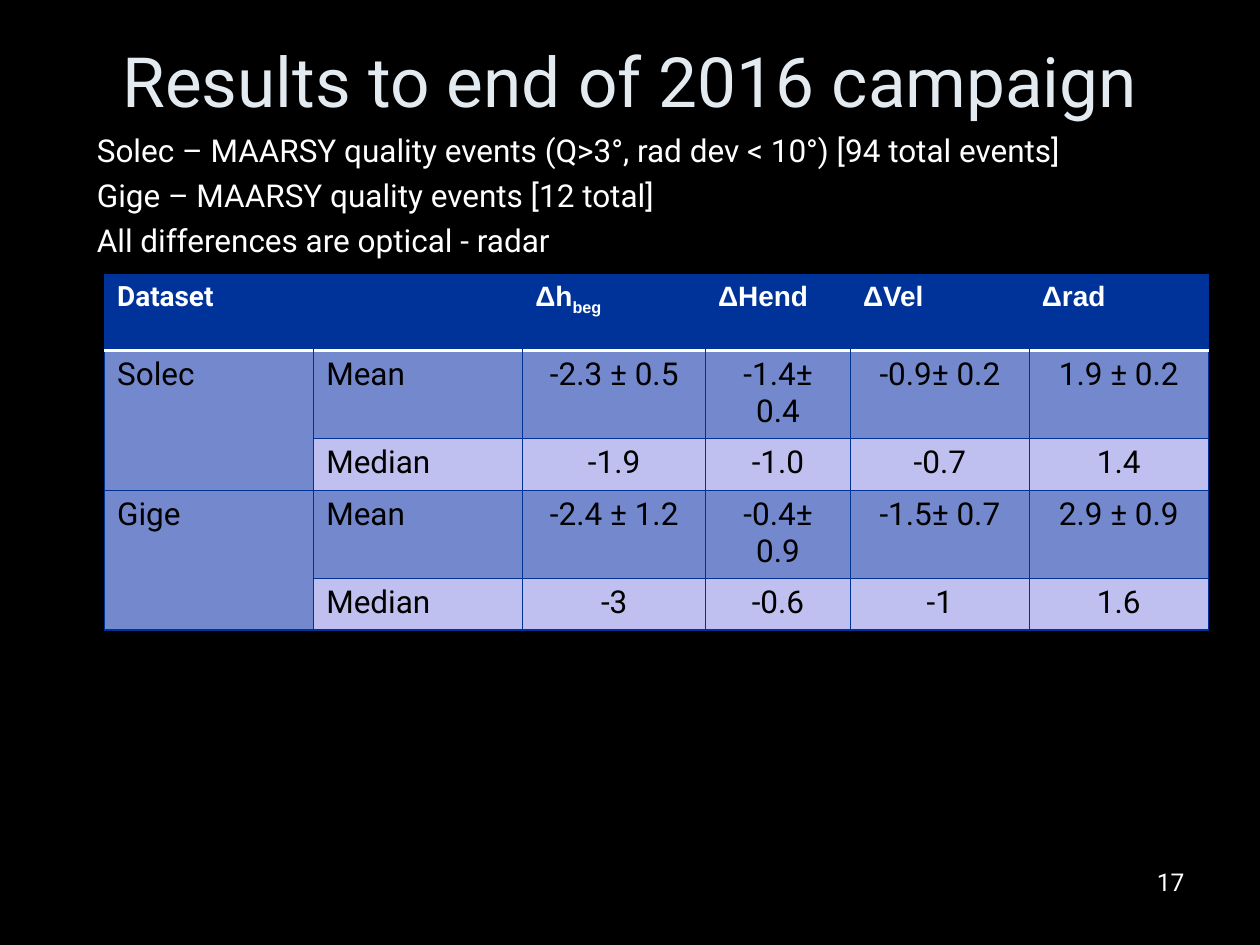
"""Build the campaign results slide with its table of optical and radar differences."""
from lxml import etree
from pptx import Presentation
from pptx import util as u
from pptx.dml.color import RGBColor
from pptx.enum import text
from pptx.oxml import ns

BLACK = RGBColor(0x00, 0x00, 0x00)
WHITE = RGBColor(0xFF, 0xFF, 0xFF)
TITLE = RGBColor(0xE3, 0xEB, 0xF1)
HEADER = RGBColor(0x00, 0x33, 0x99)
GRID = RGBColor(0x00, 0x32, 0x96)
MEAN_BAND = RGBColor(0x73, 0x88, 0xCD)
MEDIAN_BAND = RGBColor(0xC0, 0xC0, 0xF0)

COLUMN_WIDTHS = (1.66, 1.66, 1.45, 1.15, 1.42, 1.42)
ROW_HEIGHTS = (0.6, 0.69, 0.41, 0.69, 0.41)
HEADINGS = ("Dataset", "", "Δh", "ΔHend", "ΔVel", "Δrad")
ROWS = (
    ("Solec", "Mean", "-2.3 ± 0.5", "-1.4± 0.4", "-0.9± 0.2", "1.9 ± 0.2"),
    ("", "Median", "-1.9", "-1.0", "-0.7", "1.4"),
    ("Gige", "Mean", "-2.4 ± 1.2", "-0.4± 0.9", "-1.5± 0.7", "2.9 ± 0.9"),
    ("", "Median", "-3", "-0.6", "-1", "1.6"),
)
NOTES = (
    "Solec – MAARSY quality events (Q>3°, rad dev < 10°) [94 total events]",
    "Gige – MAARSY quality events [12 total]",
    "All differences are optical - radar",
)


class SlideBuilder:
    """Hold the style and the current slide."""

    def __init__(self, presentation, font="Roboto", heading_font="Arial"):
        self.font = font
        self.heading_font = heading_font
        self.slide = presentation.slides.add_slide(presentation.slide_layouts[5])
        self.slide.background.fill.solid()
        self.slide.background.fill.fore_color.rgb = BLACK

    def run(self, paragraph, words, size, color, font=None, bold=False):
        """Add one formatted run."""
        run = paragraph.add_run()
        run.text = words
        run.font.name = font or self.font
        run.font.size = u.Pt(size)
        run.font.bold = bold
        run.font.color.rgb = color
        return run

    def title(self, words, box):
        """Place and fill the title placeholder."""
        shape = self.slide.shapes.title
        shape.left, shape.top, shape.width, shape.height = map(u.Inches, box)
        frame = shape.text_frame
        frame.word_wrap = True
        frame.auto_size = text.MSO_AUTO_SIZE.NONE
        frame.margin_top = frame.margin_bottom = 0
        frame.vertical_anchor = text.MSO_ANCHOR.TOP
        frame.paragraphs[0].alignment = text.PP_ALIGN.CENTER
        self.run(frame.paragraphs[0], words, 39.6, TITLE)

    def text_box(self, lines, box, size, align=text.PP_ALIGN.LEFT, space=0):
        """Add a text box with one paragraph per line."""
        frame = self.slide.shapes.add_textbox(*map(u.Inches, box)).text_frame
        frame.word_wrap = True
        for index, line in enumerate(lines):
            paragraph = frame.add_paragraph() if index else frame.paragraphs[0]
            paragraph.alignment = align
            paragraph.space_before = u.Pt(space)
            self.run(paragraph, line, size, WHITE)

    def borders(self, cell, edges):
        """Draw cell edges given as side: (color, points), or None for no line."""
        properties = cell._tc.get_or_add_tcPr()
        for index, side in enumerate("LRTB"):
            line = etree.Element(ns.qn(f"a:ln{side}"))
            if edges.get(side):
                color, points = edges[side]
                line.set("w", str(u.Pt(points)))
                fill = etree.SubElement(line, ns.qn("a:solidFill"))
                etree.SubElement(fill, ns.qn("a:srgbClr"), val=str(color))
            else:
                etree.SubElement(line, ns.qn("a:noFill"))
            properties.insert(index, line)

    def cell(self, cell, fill, edges):
        """Fill and outline one table cell."""
        cell.fill.solid()
        cell.fill.fore_color.rgb = fill
        self.borders(cell, edges)

    def results_table(self, box):
        """Add the table of mean and median differences."""
        table = self.slide.shapes.add_table(
            len(ROW_HEIGHTS), len(COLUMN_WIDTHS), *map(u.Inches, box)).table
        for column, width in zip(table.columns, COLUMN_WIDTHS):
            column.width = u.Inches(width)
        for row, height in zip(table.rows, ROW_HEIGHTS):
            row.height = u.Inches(height)

        thin, rule = (GRID, 0.75), (WHITE, 2)
        last = len(HEADINGS) - 1
        for column, heading in enumerate(HEADINGS):
            cell = table.cell(0, column)
            self.cell(cell, HEADER, {
                "L": thin if column == 0 else None,
                "R": thin if column == last else None,
                "T": thin, "B": rule})
            if heading:
                paragraph = cell.text_frame.paragraphs[0]
                font = self.heading_font if column else self.font
                self.run(paragraph, heading, 16, WHITE, font, True)
                if heading == "Δh":
                    subscript = self.run(paragraph, "beg", 16, WHITE, font, True)
                    subscript.font._element.set("baseline", "-25000")

        for row, values in enumerate(ROWS, start=1):
            for column, value in enumerate(values):
                cell = table.cell(row, column)
                fill = MEAN_BAND if row % 2 or column == 0 else MEDIAN_BAND
                self.cell(cell, fill, {
                    "L": thin, "R": thin, "T": rule if row == 1 else thin, "B": thin})
                if value:
                    paragraph = cell.text_frame.paragraphs[0]
                    if column > 1:
                        paragraph.alignment = text.PP_ALIGN.CENTER
                    self.run(paragraph, value, 18, BLACK)
        for row in (1, 3):
            table.cell(row, 0).merge(table.cell(row + 1, 0))


def main():
    presentation = Presentation()
    presentation.slide_width = u.Inches(10)
    presentation.slide_height = u.Inches(7.5)
    builder = SlideBuilder(presentation)
    builder.title("Results to end of 2016 campaign", (0.5, 0.3, 9, 1.25))
    builder.text_box(NOTES, (0.67, 0.99, 9.21, 1.15), 18, space=4)
    builder.text_box(["17"], (7.17, 6.83, 2.33, 0.52), 14, text.PP_ALIGN.RIGHT)
    builder.results_table((0.83, 2.18, sum(COLUMN_WIDTHS), sum(ROW_HEIGHTS)))
    presentation.save("out.pptx")


if __name__ == "__main__":
    main()
